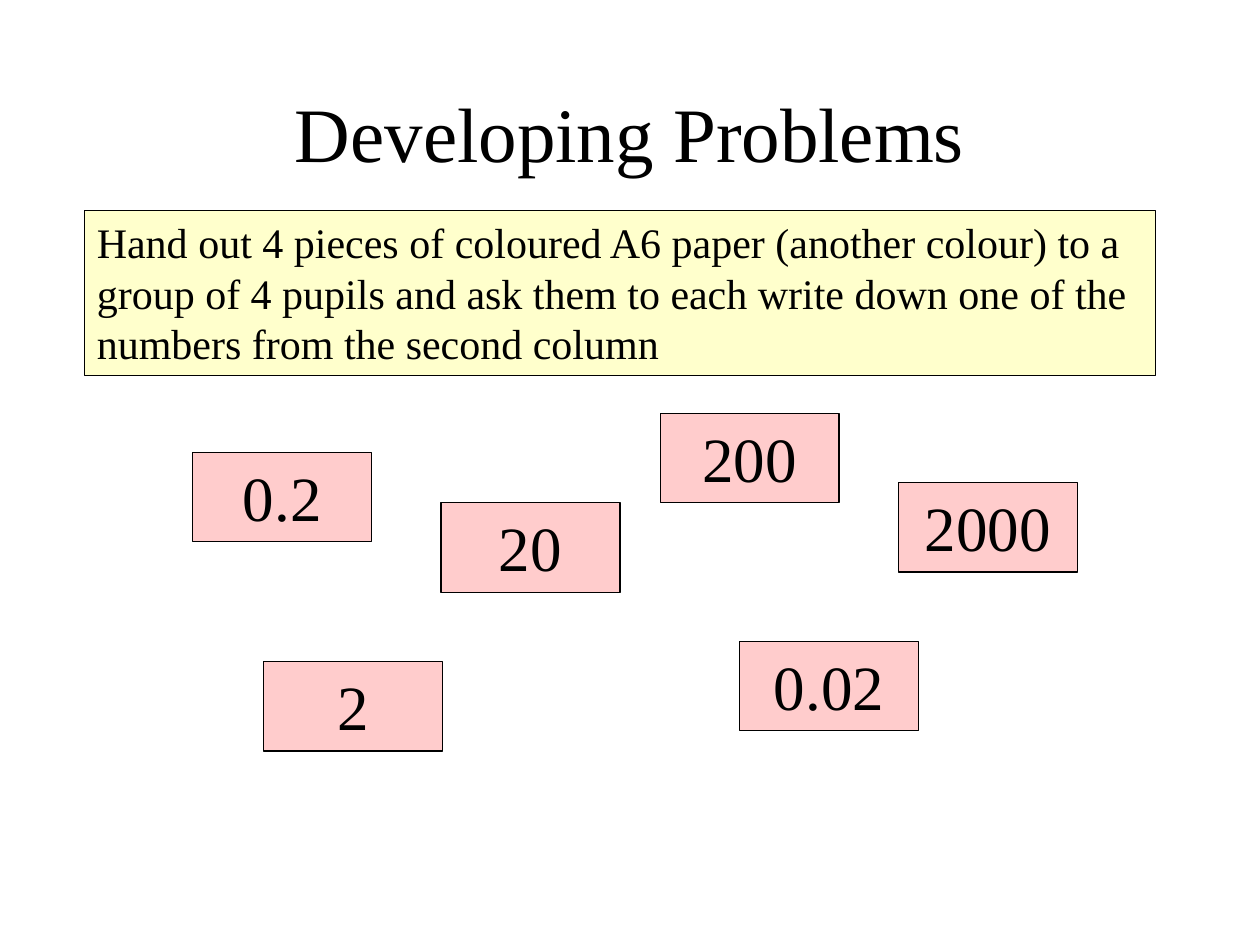
import dataclasses

import pptx
import pptx.dml.color
import pptx.enum.shapes
import pptx.enum.text
import pptx.util

Inches = pptx.util.Inches
Align = pptx.enum.text.PP_ALIGN
Anchor = pptx.enum.text.MSO_ANCHOR


@dataclasses.dataclass(frozen=True)
class Theme:
    font: str = "Times New Roman"
    ink: str = "000000"
    task: str = "FFFFCC"
    card: str = "FFCCCC"
    title_size: int = 44
    task_size: int = 24
    card_size: int = 36
    edge: float = 0.75


THEME = Theme()
CARD_SIZE = (1.42, 0.71)
CARDS = [
    ("20", 3.5, 3.99),
    ("0.2", 1.53, 3.59),
    ("2", 2.09, 5.25),
    ("200", 5.24, 3.28),
    ("0.02", 5.87, 5.09),
    ("2000", 7.13, 3.83),
]


def color(code):
    return pptx.dml.color.RGBColor.from_string(code)


def apply(target, values):
    for name, value in values.items():
        setattr(target, name, value)


def write(shape, text, size, align, anchor):
    frame = shape.text_frame
    apply(frame, {"word_wrap": True, "vertical_anchor": anchor})
    para = frame.paragraphs[0]
    para.alignment = align
    run = para.add_run()
    run.text = text
    apply(run.font, {"name": THEME.font, "size": pptx.util.Pt(size)})
    run.font.color.rgb = color(THEME.ink)


def add_title(slide, box, text):
    shape = slide.shapes.add_textbox(*map(Inches, box))
    write(shape, text, THEME.title_size, Align.CENTER, Anchor.MIDDLE)


def add_panel(slide, box, text, fill, size, align):
    kind = pptx.enum.shapes.MSO_SHAPE.RECTANGLE
    shape = slide.shapes.add_shape(kind, *map(Inches, box))
    shape.shadow.inherit = False
    shape.fill.solid()
    shape.fill.fore_color.rgb = color(fill)
    shape.line.color.rgb = color(THEME.ink)
    shape.line.width = pptx.util.Pt(THEME.edge)
    write(shape, text, size, align, Anchor.TOP)


def add_task(slide, box, text):
    add_panel(slide, box, text, THEME.task, THEME.task_size, Align.LEFT)


def add_card(slide, box, text):
    add_panel(slide, box, text, THEME.card, THEME.card_size, Align.CENTER)


def main():
    deck = pptx.Presentation()
    apply(deck, {"slide_width": Inches(10), "slide_height": Inches(7.5)})
    slide = deck.slides.add_slide(deck.slide_layouts[6])

    # Heading and task
    add_title(slide, (0.75, 0.42, 8.5, 1.25), "Developing Problems")
    add_task(
        slide,
        (0.67, 1.67, 8.5, 1.31),
        "Hand out 4 pieces of coloured A6 paper (another colour) to a group "
        "of 4 pupils and ask them to each write down one of the numbers "
        "from the second column",
    )

    # Scattered number cards
    for text, left, top in CARDS:
        add_card(slide, (left, top, *CARD_SIZE), text)

    deck.save("out.pptx")


if __name__ == "__main__":
    main()
